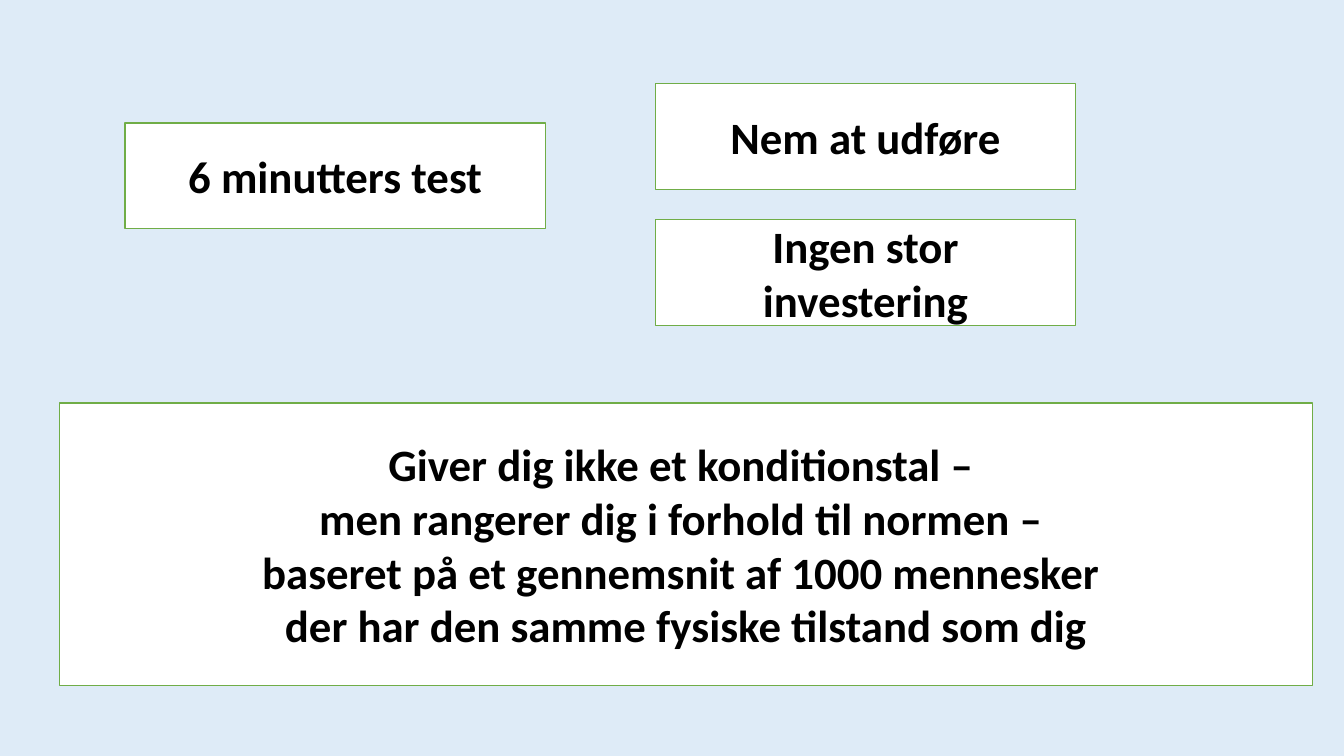
from dataclasses import dataclass

import pptx
import pptx.dml.color
import pptx.enum.shapes
import pptx.enum.text
import pptx.slide
import pptx.util
from pptx.util import Inches


@dataclass(frozen=True)
class Statement:
    left: float
    top: float
    width: float
    height: float
    lines: tuple[str, ...]


FACT_SIZE = (4.17, 1.05)
STATEMENTS = (
    Statement(1.24, 1.22, *FACT_SIZE, ("6 minutters test",)),
    Statement(6.5, 0.83, *FACT_SIZE, ("Nem at udføre",)),
    Statement(6.5, 2.18, *FACT_SIZE, ("Ingen stor investering",)),
    Statement(0.59, 4, 12.43, 2.8, (
        "Giver dig ikke et konditionstal – ",
        "men rangerer dig i forhold til normen – ",
        "baseret på et gennemsnit af 1000 mennesker ",
        "der har den samme fysiske tilstand som dig",
    )),
)


def rgb(value: str) -> pptx.dml.color.RGBColor:
    return pptx.dml.color.RGBColor.from_string(value)


def draw_statement(slide: pptx.slide.Slide, statement: Statement) -> None:
    box = slide.shapes.add_shape(
        pptx.enum.shapes.MSO_SHAPE.RECTANGLE,
        Inches(statement.left), Inches(statement.top),
        Inches(statement.width), Inches(statement.height),
    )
    box.shadow.inherit = False
    box.fill.solid()
    box.fill.fore_color.rgb = rgb("FFFFFF")
    box.line.color.rgb = rgb("70AD47")
    box.line.width = pptx.util.Pt(1)

    frame = box.text_frame
    frame.word_wrap = True
    frame.vertical_anchor = pptx.enum.text.MSO_ANCHOR.MIDDLE
    for index, line in enumerate(statement.lines):
        paragraph = frame.add_paragraph() if index else frame.paragraphs[0]
        paragraph.alignment = pptx.enum.text.PP_ALIGN.CENTER
        run = paragraph.add_run()
        run.text = line
        run.font.name = "Calibri"
        run.font.size = pptx.util.Pt(32)
        run.font.bold = True
        run.font.color.rgb = rgb("000000")


def main() -> None:
    presentation = pptx.Presentation()
    presentation.slide_width = Inches(13.33)
    presentation.slide_height = Inches(7.5)
    slide = presentation.slides.add_slide(presentation.slide_layouts[6])
    slide.background.fill.solid()
    slide.background.fill.fore_color.rgb = rgb("DEEBF7")
    for statement in STATEMENTS:
        draw_statement(slide, statement)
    presentation.save("out.pptx")


if __name__ == "__main__":
    main()
